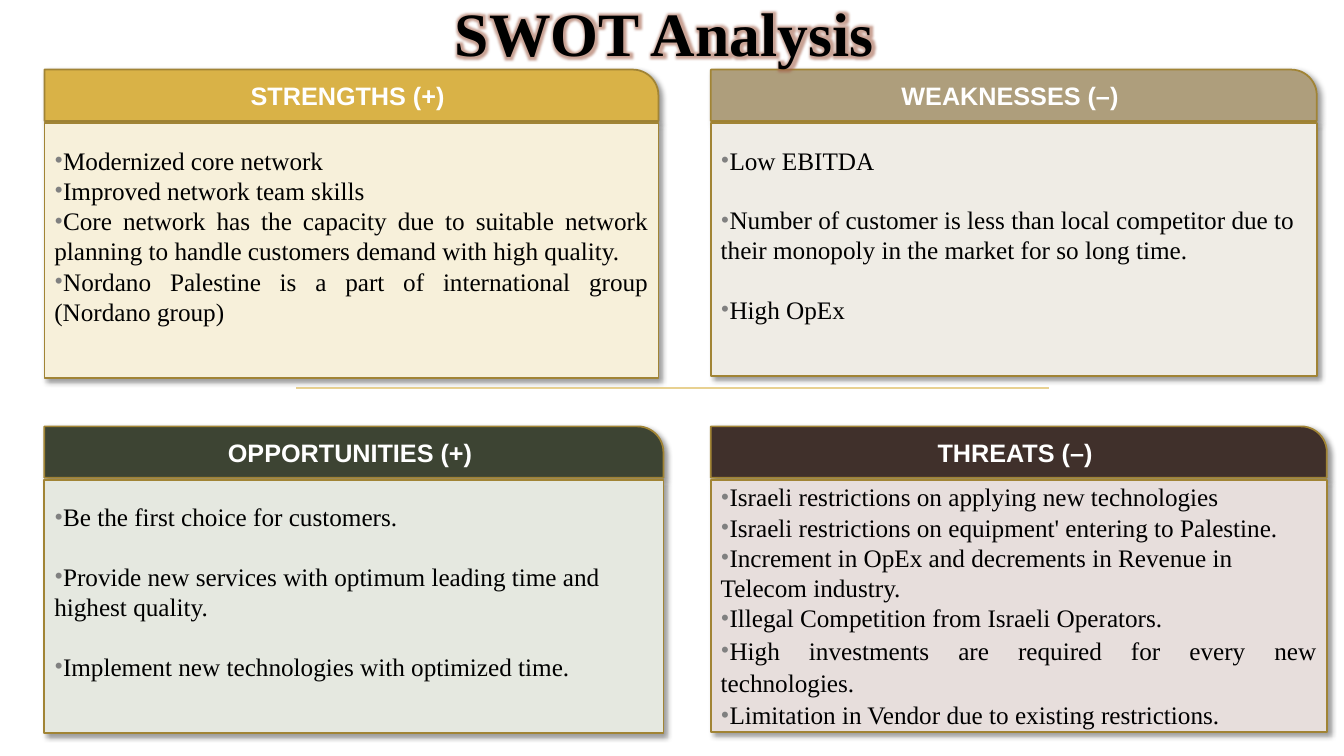
from lxml.etree import SubElement
from pptx import Presentation
from pptx.dml.color import RGBColor
from pptx.enum.shapes import MSO_CONNECTOR as Connector, MSO_SHAPE as Shape
from pptx.enum.text import MSO_ANCHOR as Anchor, PP_ALIGN as Align
from pptx.oxml import parse_xml
from pptx.oxml.ns import nsdecls, qn
from pptx.util import Inches, Pt

COLORS = {
    "text": "000000", "header_text": "FFFFFF", "bullet": "808080",
    "border": "A18435", "divider": "E8D191", "glow": "A5644E",
    "strengths": "D9B247", "strengths_body": "F7F0DA",
    "weaknesses": "AE9E7C", "weaknesses_body": "EFECE5",
    "opportunities": "3D4433", "opportunities_body": "E5E8E0",
    "threats": "40302B", "threats_body": "E7DEDC",
}
BLANK_LINE = 21  # points
HEADER_HEIGHT, BODY_OFFSET = 0.51, 0.53


def rgb(name):
    return RGBColor.from_string(COLORS[name])


class SwotSlide:
    heading_font, body_font, size = "Arial", "Times New Roman", Pt(18)

    def __init__(self, deck):
        self.slide = deck.slides.add_slide(deck.slide_layouts[5])
        self.shapes = self.slide.shapes

    def style_font(self, font, name, color, size=None, bold=False):
        font.name, font.size, font.bold = name, size or self.size, bold
        font.color.rgb = rgb(color)

    def title(self, text):
        title = self.shapes.title
        title.left, title.top = Inches(0), Inches(-0.1)
        title.width, title.height = Inches(13.33), Inches(0.84)
        frame = title.text_frame
        frame.text, frame.word_wrap = text, True
        frame.vertical_anchor = Anchor.TOP
        heading = frame.paragraphs[0]
        heading.alignment = Align.CENTER
        run = heading.runs[0]
        self.style_font(run.font, self.body_font, "text", Pt(44), True)
        # White outline and soft glow around the letters
        props = run.font._element
        props.insert(0, parse_xml(
            f'<a:ln {nsdecls("a")} w="9525"><a:solidFill>'
            '<a:srgbClr val="FFFFFF"/></a:solidFill></a:ln>'))
        props.find(qn("a:solidFill")).addnext(parse_xml(
            f'<a:effectLst {nsdecls("a")}><a:glow rad="101600">'
            f'<a:srgbClr val="{COLORS["glow"]}"><a:alpha val="60000"/>'
            '</a:srgbClr></a:glow></a:effectLst>'))
        # Keep the title in front of the panels
        title._element.getparent().append(title._element)

    def divider(self, left, right, y):
        line = self.shapes.add_connector(
            Connector.STRAIGHT, Inches(left), Inches(y), Inches(right), Inches(y))
        line.line.color.rgb, line.line.width = rgb("divider"), Pt(1.25)
        SubElement(line._element.spPr, qn("a:effectLst"))

    def box(self, kind, left, top, width, height, fill):
        box = self.shapes.add_shape(
            kind, Inches(left), Inches(top), Inches(width), Inches(height))
        box.shadow.inherit = False
        box.fill.solid()
        box.fill.fore_color.rgb = rgb(fill)
        box.line.color.rgb, box.line.width = rgb("border"), Pt(1.25)
        box._element.spPr.find(qn("a:effectLst")).append(parse_xml(
            f'<a:outerShdw {nsdecls("a")} blurRad="50800" dist="38100" '
            'dir="2700000" algn="tl" rotWithShape="0"><a:srgbClr val="000000">'
            '<a:alpha val="40000"/></a:srgbClr></a:outerShdw>'))
        box.text_frame.word_wrap = True
        box.text_frame.vertical_anchor = Anchor.MIDDLE
        return box

    def header(self, text, left, top, width, fill):
        box = self.box(Shape.ROUND_1_RECTANGLE, left, top, width, HEADER_HEIGHT, fill)
        box.adjustments[0] = 0.5
        label = box.text_frame.paragraphs[0]
        label.text, label.alignment = text, Align.CENTER
        self.style_font(label.font, self.heading_font, "header_text", bold=True)

    def bullets(self, points, left, top, width, height, fill, gap, tail, justified):
        frame = self.box(Shape.RECTANGLE, left, top, width, height, fill).text_frame
        frame.margin_bottom = Inches(0.05) + Pt(tail)
        for index, point in enumerate(points):
            item = frame.add_paragraph() if index else frame.paragraphs[0]
            item.text = point
            item.alignment = Align.JUSTIFY if index in justified else Align.LEFT
            if index and gap:
                item.space_before = Pt(gap)
            props = item._p.get_or_add_pPr()
            props.set("marL", "0")
            props.set("indent", "0")
            color = SubElement(props, qn("a:buClr"))
            SubElement(color, qn("a:srgbClr"), val=COLORS["bullet"])
            SubElement(props, qn("a:buFont"), typeface=self.body_font)
            SubElement(props, qn("a:buChar"), char="•")
            self.style_font(item.font, self.body_font, "text")
        return frame

    def panel(self, name, sign, points, left, top, width, height,
              gap=0, tail=BLANK_LINE, justified=()):
        self.header(f"{name.upper()} ({sign})", left, top, width, name)
        return self.bullets(points, left, top + BODY_OFFSET, width, height,
                            f"{name}_body", gap, tail, justified)


def main():
    deck = Presentation()
    deck.slide_width, deck.slide_height = Inches(13.33), Inches(7.5)
    swot = SwotSlide(deck)
    left, right, upper, lower = 0.44, 7.05, 0.69, 4.23

    swot.divider(2.94, 10.4, 3.85)

    # Upper row: internal factors
    swot.panel("strengths", "+", [
        "Modernized core network",
        "Improved network team skills",
        "Core network has the capacity due to suitable network planning "
        "to handle customers demand with high quality.",
        "Nordano Palestine is a part of international group (Nordano group)",
    ], left, upper, 6.09, 2.53, justified=range(4))
    swot.panel("weaknesses", "–", [
        "Low EBITDA",
        "Number of customer is less than local competitor due to their "
        "monopoly in the market for so long time.",
        "High OpEx",
    ], right, upper, 6.01, 2.51, gap=BLANK_LINE)

    # Lower row: external factors
    swot.panel("opportunities", "+", [
        "Be the first choice for customers.",
        "Provide new services with optimum leading time and highest quality.",
        "Implement new technologies with optimized time.",
    ], left, lower, 6.14, 2.51, gap=BLANK_LINE)
    threats = swot.panel("threats", "–", [
        "Israeli restrictions on applying new technologies",
        "Israeli restrictions on equipment' entering to Palestine.",
        "Increment in OpEx and decrements in Revenue in Telecom industry.",
        "Illegal Competition from Israeli Operators.",
        "High investments are required for every new technologies.",
        "Limitation in Vendor due to existing restrictions.",
    ], right, lower, 6.11, 2.5, tail=0, justified=(4, 5))
    for item in threats.paragraphs[-2:]:
        item.line_spacing = 1.07

    swot.title("SWOT Analysis ")
    deck.save("out.pptx")


if __name__ == "__main__":
    main()
